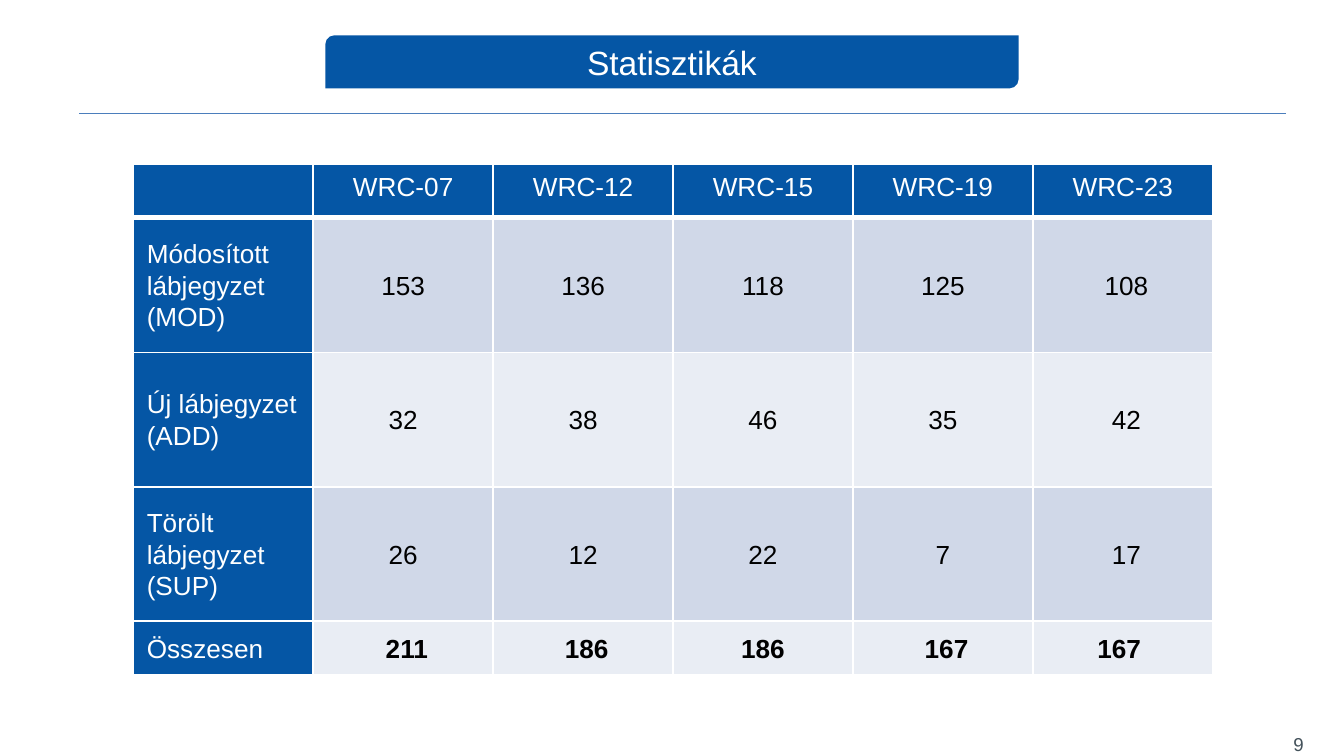
import pptx
import pptx.dml.color
import pptx.enum.shapes
import pptx.enum.text
import pptx.oxml
import pptx.oxml.ns
import pptx.util

Cm = pptx.util.Cm
Pt = pptx.util.Pt
ALIGN = pptx.enum.text.PP_ALIGN
MIDDLE = pptx.enum.text.MSO_ANCHOR.MIDDLE
TOP = pptx.enum.text.MSO_ANCHOR.TOP

HUES = {
    "blue": "0556A5",
    "rule": "4B7EBC",
    "dark": "D0D8E8",
    "light": "E9EDF4",
    "white": "FFFFFF",
    "black": "000000",
    "grey": "43515A",
}
ROWS = [
    ["", "WRC-07", "WRC-12", "WRC-15", "WRC-19", "WRC-23"],
    ["Módosított lábjegyzet (MOD)", "153", "136", "118", "125", " 108"],
    ["Új lábjegyzet (ADD)", "32", "38", "46", "35", " 42"],
    ["Törölt lábjegyzet (SUP)", "26", "12", "22", "7", " 17"],
    ["Összesen", " 211", " 186", "186", " 167", "167 "],
]
HEIGHTS = [1.02, 2.54, 2.54, 2.54, 1.02]
WIDTH = 3.4


def tint(name):
    return pptx.dml.color.RGBColor.from_string(HUES[name])


def paint(item, name):
    item.fill.solid()
    item.fill.fore_color.rgb = tint(name)


def write(frame, text, size=14, hue="black", bold=False, align=ALIGN.CENTER, space=1.0):
    frame.word_wrap = True
    para = frame.paragraphs[0]
    para.text = text
    para.alignment = align
    para.line_spacing = space
    font = para.font
    font.name, font.size, font.bold = "Arial", Pt(size), bold
    font.color.rgb = tint(hue)


def edge(cell, side, width):
    """Draw a white border on one side (L, R, T or B) of a cell."""
    line = pptx.oxml.parse_xml(
        f'<a:ln{side} {pptx.oxml.ns.nsdecls("a")} w="{Pt(width)}"><a:solidFill>'
        f'<a:srgbClr val="{HUES["white"]}"/></a:solidFill></a:ln{side}>'
    )
    cell._tc.get_or_add_tcPr().append(line)


def add_title(slide, text):
    box = Cm(6.15), Cm(0.67), Cm(13.1), Cm(1)
    kind = pptx.enum.shapes.MSO_SHAPE.ROUND_2_DIAG_RECTANGLE
    banner = slide.shapes.add_shape(kind, *box)
    banner.shadow.inherit = False
    paint(banner, "blue")
    banner.line.fill.background()

    title = slide.shapes.title
    title.left, title.top, title.width, title.height = box
    title.element.addprevious(banner.element)
    frame = title.text_frame
    frame.auto_size = pptx.enum.text.MSO_AUTO_SIZE.NONE
    frame.vertical_anchor = MIDDLE
    write(frame, text, size=18, hue="white")


def add_rule(slide):
    kind = pptx.enum.shapes.MSO_CONNECTOR.STRAIGHT
    rule = slide.shapes.add_connector(kind, Cm(1.5), Cm(2.14), Cm(24.3), Cm(2.14))
    rule.line.color.rgb = tint("rule")
    rule.line.width = Pt(0.75)
    props = rule.element.spPr
    props.append(props.makeelement(pptx.oxml.ns.qn("a:effectLst")))


def fill_cell(cell, text, row, col):
    head = row == 0 or col == 0
    edge(cell, "L", 1)
    edge(cell, "R", 1)
    edge(cell, "T", 3 if row == 1 else 1)
    edge(cell, "B", 3 if row == 0 else 1)
    paint(cell, "blue" if head else "dark" if row % 2 else "light")
    cell.vertical_anchor = MIDDLE if row else TOP
    write(
        cell.text_frame,
        text,
        hue="white" if head else "black",
        bold=not head and row == len(ROWS) - 1,
        align=ALIGN.CENTER if col else ALIGN.LEFT,
        space=1.07,
    )


def add_grid(slide):
    count = len(ROWS[0])
    grid = slide.shapes.add_table(
        len(ROWS), count, Cm(2.52), Cm(3.1), Cm(WIDTH * count), Cm(sum(HEIGHTS))
    ).table
    grid.first_col = True
    grid.horz_banding = False
    for col in grid.columns:
        col.width = Cm(WIDTH)
    for r, (height, texts) in enumerate(zip(HEIGHTS, ROWS)):
        grid.rows[r].height = Cm(height)
        for c, text in enumerate(texts):
            fill_cell(grid.cell(r, c), text, r, c)


def add_page(slide, text):
    box = slide.shapes.add_textbox(Cm(23.7), Cm(13.69), Cm(1.19), Cm(0.76))
    box.text_frame.vertical_anchor = MIDDLE
    write(box.text_frame, text, size=10, hue="grey", align=ALIGN.RIGHT)


def main():
    deck = pptx.Presentation()
    deck.slide_width, deck.slide_height = Cm(25.4), Cm(14.29)
    slide = deck.slides.add_slide(deck.slide_layouts[5])
    add_page(slide, "9")
    add_rule(slide)
    add_title(slide, "Statisztikák")
    add_grid(slide)
    deck.save("out.pptx")


if __name__ == "__main__":
    main()
